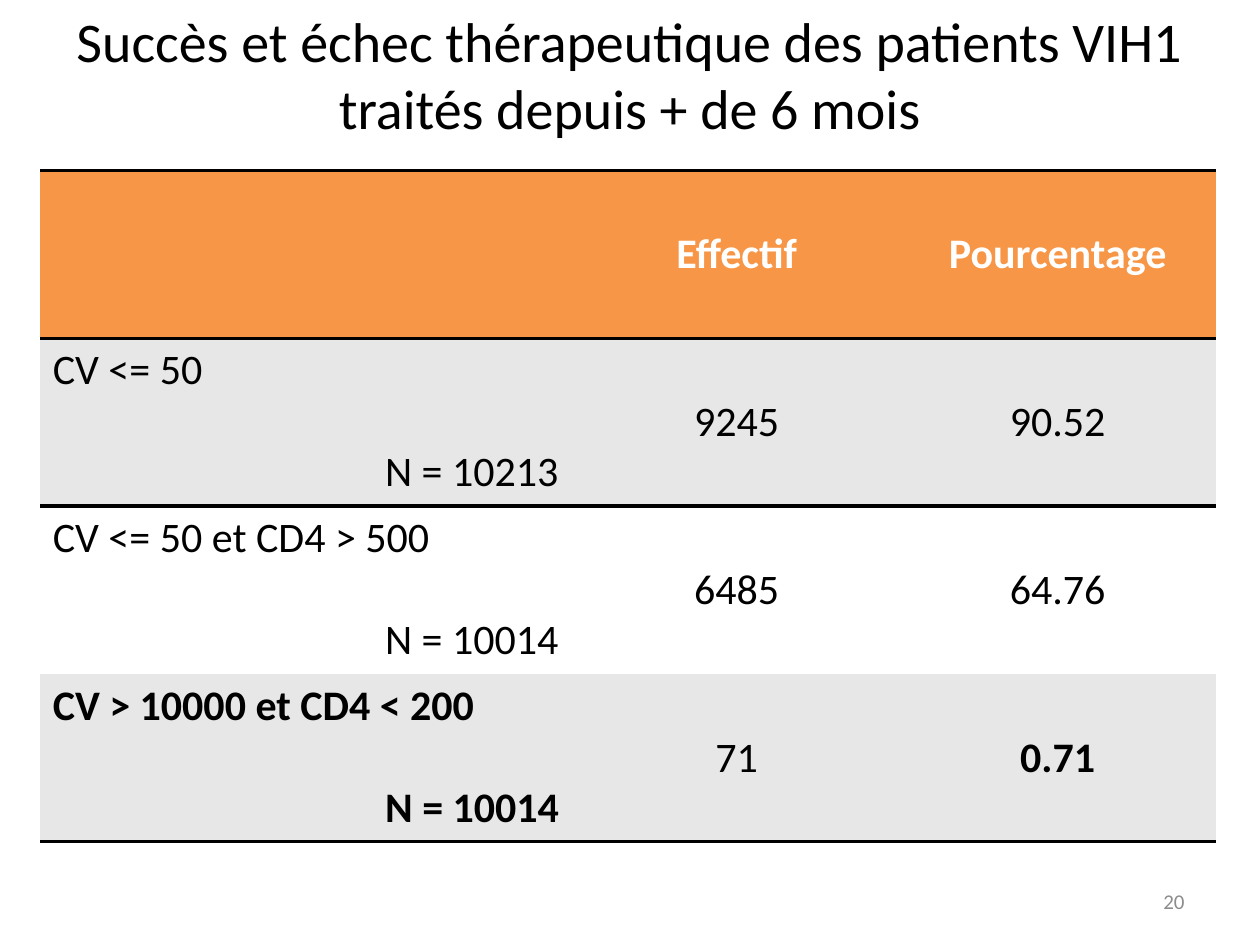
import pptx
import pptx.dml.color
import pptx.enum.text
import pptx.oxml
import pptx.oxml.ns
import pptx.util
from dataclasses import dataclass

Cm, Pt = pptx.util.Cm, pptx.util.Pt
ALIGN = pptx.enum.text.PP_ALIGN
ANCHOR = pptx.enum.text.MSO_ANCHOR


@dataclass(frozen=True)
class Theme:
    font: str = "Calibri"
    ink: str = "000000"
    paper: str = "FFFFFF"
    accent: str = "F79646"
    band: str = "E7E7E7"
    muted: str = "8C8C8C"
    title: int = 32
    body: int = 24
    small: int = 12
    rule: int = 2


THEME = Theme()
NO_STYLE = "{2D5ABB26-0587-4C30-8999-92F81FD0307C}"
HEADER = ("", "Effectif", "Pourcentage")
# criterion, population, count, percentage, emphasised
ROWS = [
    ("CV <= 50", "N = 10213", "9245", "90.52", False),
    ("CV <= 50 et CD4 > 500", "N = 10014", "6485", "64.76", False),
    ("CV > 10000 et CD4 < 200", "N = 10014", "71", "0.71", True),
]


def rgb(color):
    return pptx.dml.color.RGBColor.from_string(color)


def write(p, text, size=THEME.body, color=THEME.ink, bold=False,
          align=ALIGN.LEFT, before=0, indent=0):
    p.alignment = align
    if before:
        p.space_before = Pt(before)
    if indent:
        p._p.get_or_add_pPr().set("marL", str(indent))
    r = p.add_run()
    r.text = text
    r.font.name = THEME.font
    r.font.size = Pt(size)
    r.font.bold = bold
    r.font.color.rgb = rgb(color)


def add_text(s, box, text, anchor=ANCHOR.TOP, **fmt):
    tf = s.shapes.add_textbox(*box).text_frame
    tf.word_wrap = True
    tf.vertical_anchor = anchor
    write(tf.paragraphs[0], text, **fmt)


def style_cell(cell, fill, edges):
    """Fill the cell and rule the edges given, as lnT and lnB tags."""
    tcPr = cell._tc.get_or_add_tcPr()
    for tag in edges:
        tcPr.append(pptx.oxml.parse_xml(
            f'<a:{tag} {pptx.oxml.ns.nsdecls("a")} w="{Pt(THEME.rule)}">'
            f'<a:solidFill><a:srgbClr val="{THEME.ink}"/></a:solidFill></a:{tag}>'))
    cell.fill.solid()
    cell.fill.fore_color.rgb = rgb(fill)
    cell.vertical_anchor = ANCHOR.MIDDLE


def add_results(s, box):
    left, top, width, height = box
    n = len(ROWS) + 1
    table = s.shapes.add_table(n, len(HEADER), *box).table
    table._tbl.tblPr.find(pptx.oxml.ns.qn("a:tableStyleId")).text = NO_STYLE
    for col, share in zip(table.columns, (0.454, 0.277, 0.269)):
        col.width = int(width * share)

    for i, row in enumerate(table.rows):
        row.height = height // n
        fill = THEME.accent if i == 0 else THEME.band if i % 2 else THEME.paper
        edges = ["lnT"] * (i < 2) + ["lnB"] * (i in (0, n - 1))
        for cell in row.cells:
            style_cell(cell, fill, edges)

    for j, text in enumerate(HEADER[1:], 1):
        write(table.cell(0, j).text_frame.paragraphs[0], text,
              color=THEME.paper, bold=True, align=ALIGN.CENTER)

    for i, (criterion, population, count, percent, strong) in enumerate(ROWS, 1):
        label = table.cell(i, 0)
        label.vertical_anchor = ANCHOR.TOP
        tf = label.text_frame
        write(tf.paragraphs[0], criterion, bold=strong)
        write(tf.add_paragraph(), population, bold=strong,
              before=29, indent=Cm(6.7))
        for j, (text, bold) in enumerate([(count, False), (percent, strong)], 1):
            write(table.cell(i, j).text_frame.paragraphs[0], text,
                  bold=bold, align=ALIGN.CENTER)


def main():
    prs = pptx.Presentation()
    prs.slide_width, prs.slide_height = Cm(25.4), Cm(19.05)
    s = prs.slides.add_slide(prs.slide_layouts[6])
    add_text(s, (Cm(18.2), Cm(17.66), Cm(5.93), Cm(1.01)), "20",
             anchor=ANCHOR.MIDDLE, size=THEME.small, color=THEME.muted,
             align=ALIGN.RIGHT)
    add_text(s, (0, 0, prs.slide_width, Cm(3)),
             "Succès et échec thérapeutique des patients VIH1 "
             "traités depuis + de 6 mois",
             size=THEME.title, align=ALIGN.CENTER)
    add_results(s, (Cm(0.81), Cm(3.43), Cm(23.7), Cm(13.54)))
    prs.save("out.pptx")


if __name__ == "__main__":
    main()
